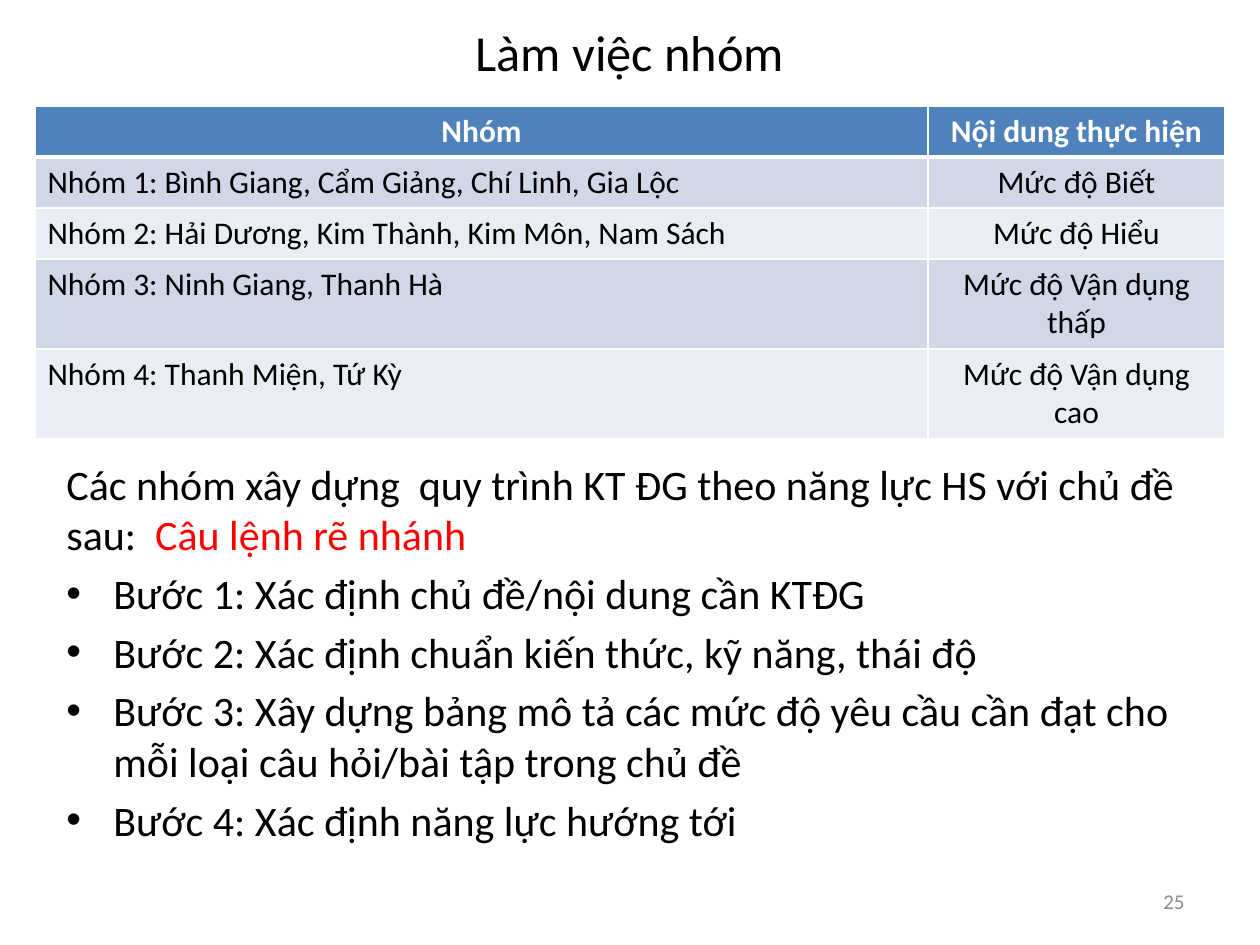
from lxml.etree import SubElement
from pptx import Presentation
from pptx.dml.color import RGBColor
from pptx.enum.text import MSO_ANCHOR as Anchor, PP_ALIGN as Align
from pptx.oxml.ns import qn
from pptx.util import Pt

COLORS = {"text": "000000", "accent": "FF0000", "number": "8C8C8C", "white": "FFFFFF",
          "header": "4F81BD", "odd": "D0D8E8", "even": "E9EDF4"}
FONT = "Calibri"

TITLE = "Làm việc nhóm"
HEADINGS = ("Nhóm", "Nội dung thực hiện")
GROUPS = [
    ("Nhóm 1: Bình Giang, Cẩm Giảng, Chí Linh, Gia Lộc", "Mức độ Biết"),
    ("Nhóm 2: Hải Dương, Kim Thành, Kim Môn, Nam Sách", "Mức độ Hiểu"),
    ("Nhóm 3: Ninh Giang, Thanh Hà", "Mức độ Vận dụng thấp"),
    ("Nhóm 4: Thanh Miện, Tứ Kỳ", "Mức độ Vận dụng cao"),
]
INTRO = [
    ("Các nhóm xây dựng  quy trình KT ĐG theo năng lực HS với chủ đề sau:  ", "text"),
    ("Câu lệnh rẽ nhánh", "accent"),
]
STEPS = [
    "Bước 1: Xác định chủ đề/nội dung cần KTĐG",
    "Bước 2: Xác định chuẩn kiến thức, kỹ năng, thái độ",
    "Bước 3: Xây dựng bảng mô tả các mức độ yêu cầu cần đạt cho mỗi loại câu hỏi/bài tập trong chủ đề",
    "Bước 4: Xác định năng lực hướng tới",
]
PAGE_NUMBER = "25"

TITLE_AREA = (63, 16, 1134, 71)
BODY_AREA = (54, 452, 1134, 436)
NUMBER_AREA = (903, 876, 294, 50)
TABLE_PLACE = (35, 106)
COLUMN_WIDTHS = (893, 297)
ROW_HEIGHTS = (51, 51, 51, 90, 90)
BULLET_INDENT = 47


def px(count):
    return round(count * 914400 / 126)


def add_span(para, text, size, color="text", bold=False):
    span = para.add_run()
    span.text = text
    for name, value in {"name": FONT, "size": Pt(size), "bold": bold}.items():
        setattr(span.font, name, value)
    span.font.color.rgb = RGBColor.from_string(COLORS[color])


def add_box(page, area, anchor):
    frame = page.shapes.add_textbox(*map(px, area)).text_frame
    for name, value in {"word_wrap": True, "vertical_anchor": anchor}.items():
        setattr(frame, name, value)
    return frame


def add_line(page, area, text, size, align, color="text"):
    para = add_box(page, area, Anchor.MIDDLE).paragraphs[0]
    para.alignment = align
    add_span(para, text, size, color)


def add_bullet(para):
    properties = para._p.get_or_add_pPr()
    properties.set("marL", str(px(BULLET_INDENT)))
    properties.set("indent", str(-px(BULLET_INDENT)))
    SubElement(properties, qn("a:buFont"), typeface="Arial")
    SubElement(properties, qn("a:buChar"), char="•")


def set_borders(cell, widths):
    properties = cell._tc.get_or_add_tcPr()
    for side, width in widths.items():
        line = SubElement(properties, qn(f"a:ln{side}"), w=str(Pt(width)))
        SubElement(SubElement(line, qn("a:solidFill")), qn("a:srgbClr"), val=COLORS["white"])


def add_groups(page):
    rows = [HEADINGS, *GROUPS]
    size = (sum(COLUMN_WIDTHS), sum(ROW_HEIGHTS))
    table = page.shapes.add_table(len(rows), len(HEADINGS), *map(px, TABLE_PLACE + size)).table
    for column, width in zip(table.columns, COLUMN_WIDTHS):
        column.width = px(width)
    for index, (row, height, texts) in enumerate(zip(table.rows, ROW_HEIGHTS, rows)):
        row.height = px(height)
        header = index == 0
        fill = "header" if header else "odd" if index % 2 else "even"
        for position, (cell, text) in enumerate(zip(row.cells, texts)):
            set_borders(cell, {"L": 1, "R": 1, "T": 3 if index == 1 else 1, "B": 3 if header else 1})
            cell.fill.solid()
            cell.fill.fore_color.rgb = RGBColor.from_string(COLORS[fill])
            para = cell.text_frame.paragraphs[0]
            para.alignment = Align.CENTER if header or position else Align.LEFT
            add_span(para, text, 18, "white" if header else "text", header)


def add_body(page):
    frame = add_box(page, BODY_AREA, Anchor.TOP)
    for index, spans in enumerate([INTRO, *([(step, "text")] for step in STEPS)]):
        para = frame.add_paragraph() if index else frame.paragraphs[0]
        para.space_before = Pt(4.8)
        if index:
            add_bullet(para)
        for text, color in spans:
            add_span(para, text, 24, color)


def main():
    deck = Presentation()
    deck.slide_width, deck.slide_height = px(1260), px(945)
    page = deck.slides.add_slide(deck.slide_layouts[6])
    add_line(page, TITLE_AREA, TITLE, 28.8, Align.CENTER)
    add_body(page)
    add_line(page, NUMBER_AREA, PAGE_NUMBER, 12, Align.RIGHT, "number")
    add_groups(page)
    deck.save("out.pptx")


if __name__ == "__main__":
    main()
